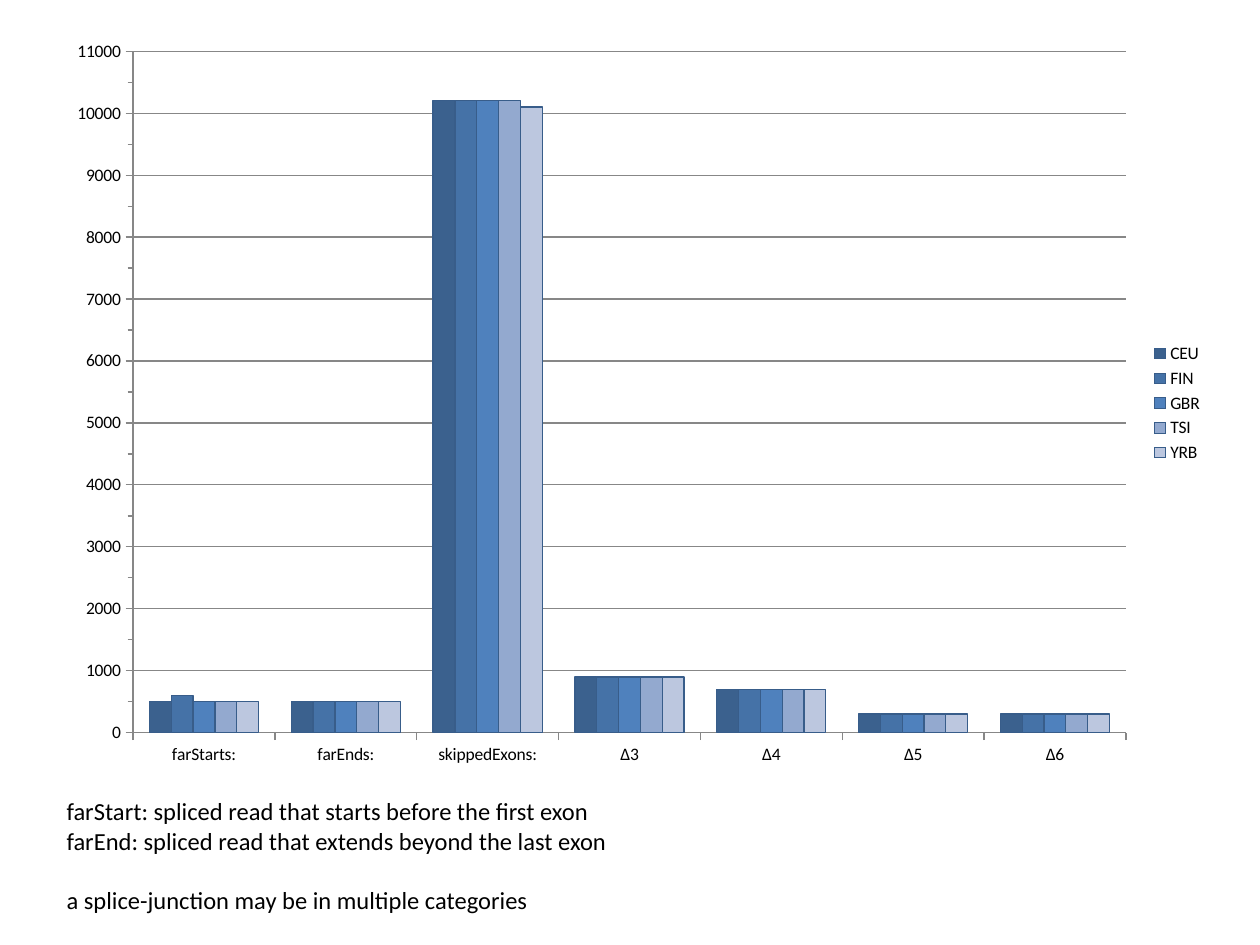
from pptx import Presentation
from pptx import util as u
from pptx.chart.data import CategoryChartData
from pptx.dml.color import RGBColor
from pptx.enum import chart as ch, text

CATEGORIES = ["farStarts:", "farEnds:", "skippedExons:", "Δ3", "Δ4", "Δ5", "Δ6"]
# population: (bar colour, splice-junction counts)
POPULATIONS = {
    "CEU": ("3B618E", [500, 500, 10200, 900, 700, 300, 300]),
    "FIN": ("4572A7", [600, 500, 10200, 900, 700, 300, 300]),
    "GBR": ("4F81BD", [500, 500, 10200, 900, 700, 300, 300]),
    "TSI": ("93A9CF", [500, 500, 10200, 900, 700, 300, 300]),
    "YRB": ("BCC7DF", [500, 500, 10100, 900, 700, 300, 300]),
}
# (wording, points of space before)
DEFINITIONS = [
    ("farStart: spliced read that starts before the first exon", 0),
    ("farEnd: spliced read that extends beyond the last exon", 0),
    ("a splice-junction may be in multiple categories", 17),
]


def rgb(hex_colour):
    return RGBColor.from_string(hex_colour)


class SlideBuilder:
    font_name = "Calibri"
    ink = "000000"
    axis_line = "878787"
    bar_line = "385D8A"

    def __init__(self, slide):
        self.s = slide

    def style_font(self, font, size):
        font.name = self.font_name
        font.size = u.Pt(size)
        font.color.rgb = rgb(self.ink)

    def style_line(self, line, colour):
        line.color.rgb = rgb(colour)
        line.width = u.Pt(0.75)

    def column_chart(self, left, top, width, height):
        data = CategoryChartData(number_format="General")
        data.categories = CATEGORIES
        for name, (_, counts) in POPULATIONS.items():
            data.add_series(name, counts)
        chart = self.s.shapes.add_chart(
            ch.XL_CHART_TYPE.COLUMN_CLUSTERED, u.Inches(left), u.Inches(top),
            u.Inches(width), u.Inches(height), data).chart
        self.style_font(chart.font, 10)
        chart.has_title = False
        chart.has_legend = True
        chart.legend.position = ch.XL_LEGEND_POSITION.RIGHT
        chart.legend.include_in_layout = False

        plot = chart.plots[0]
        plot.gap_width = 150
        plot.overlap = 0
        plot.vary_by_categories = False
        for series, (colour, _) in zip(plot.series, POPULATIONS.values()):
            series.format.fill.solid()
            series.format.fill.fore_color.rgb = rgb(colour)
            self.style_line(series.format.line, self.bar_line)

        for axis in (chart.category_axis, chart.value_axis):
            axis.major_tick_mark = ch.XL_TICK_MARK.OUTSIDE
            self.style_line(axis.format.line, self.axis_line)
        axis = chart.value_axis
        axis.minor_tick_mark = ch.XL_TICK_MARK.OUTSIDE
        axis.minimum_scale, axis.maximum_scale = 0, 11000
        axis.major_unit, axis.minor_unit = 1000, 500
        axis.has_major_gridlines = True
        self.style_line(axis.major_gridlines.format.line, self.axis_line)

    def text_box(self, left, top, width, height):
        tf = self.s.shapes.add_textbox(
            u.Inches(left), u.Inches(top), u.Inches(width), u.Inches(height)).text_frame
        tf.word_wrap = False
        tf.auto_size = text.MSO_AUTO_SIZE.SHAPE_TO_FIT_TEXT
        tf.text = "\n".join(wording for wording, _ in DEFINITIONS)
        for p, (_, space) in zip(tf.paragraphs, DEFINITIONS):
            p.space_before = u.Pt(space)
            self.style_font(p.runs[0].font, 14)


def main():
    prs = Presentation()
    prs.slide_width, prs.slide_height = u.Inches(10), u.Inches(7.5)
    builder = SlideBuilder(prs.slides.add_slide(prs.slide_layouts[6]))
    builder.column_chart(0.43, 0.21, 9.22, 5.98)
    builder.text_box(0.43, 6.27, 4.53, 1.04)
    prs.save("out.pptx")


if __name__ == "__main__":
    main()
